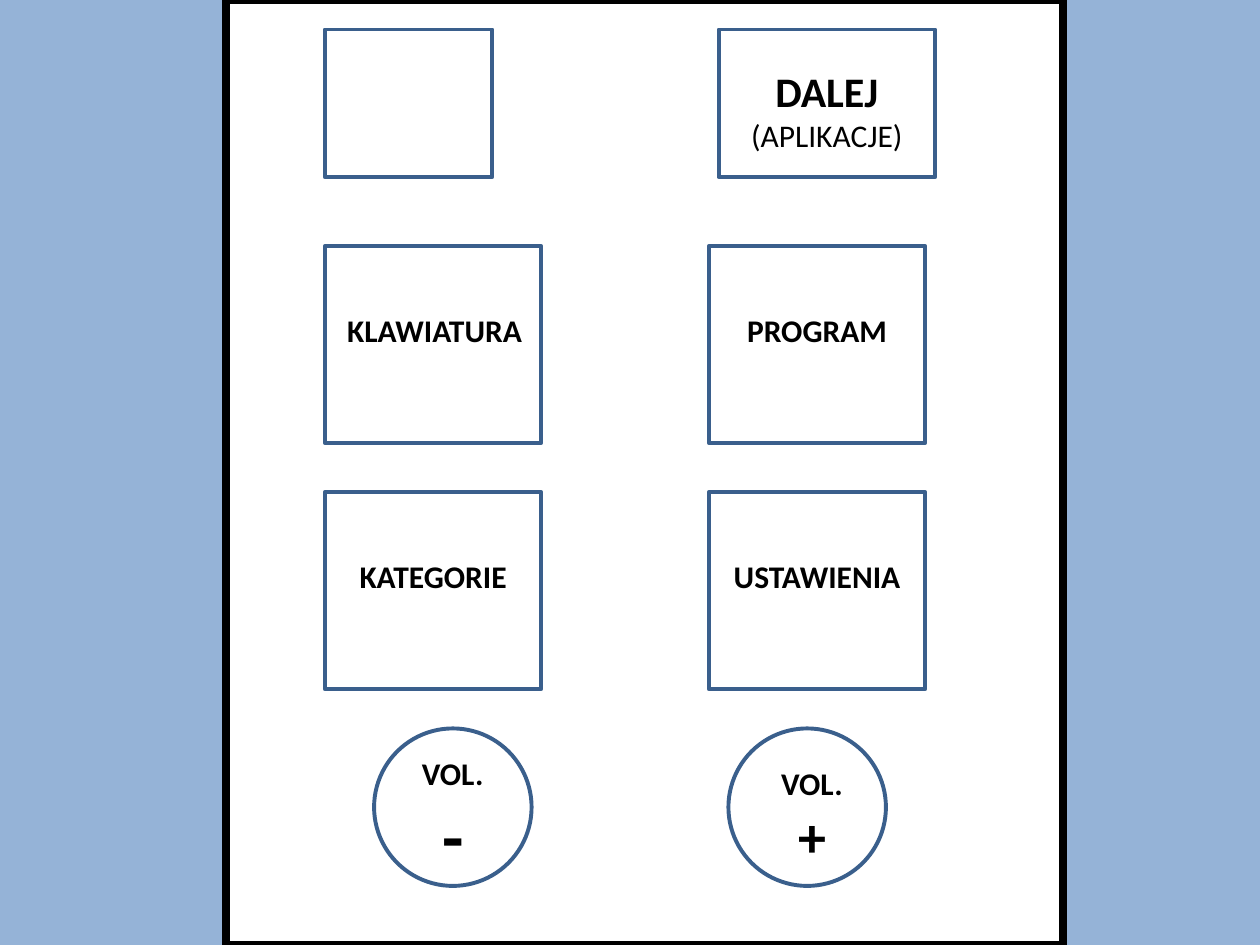
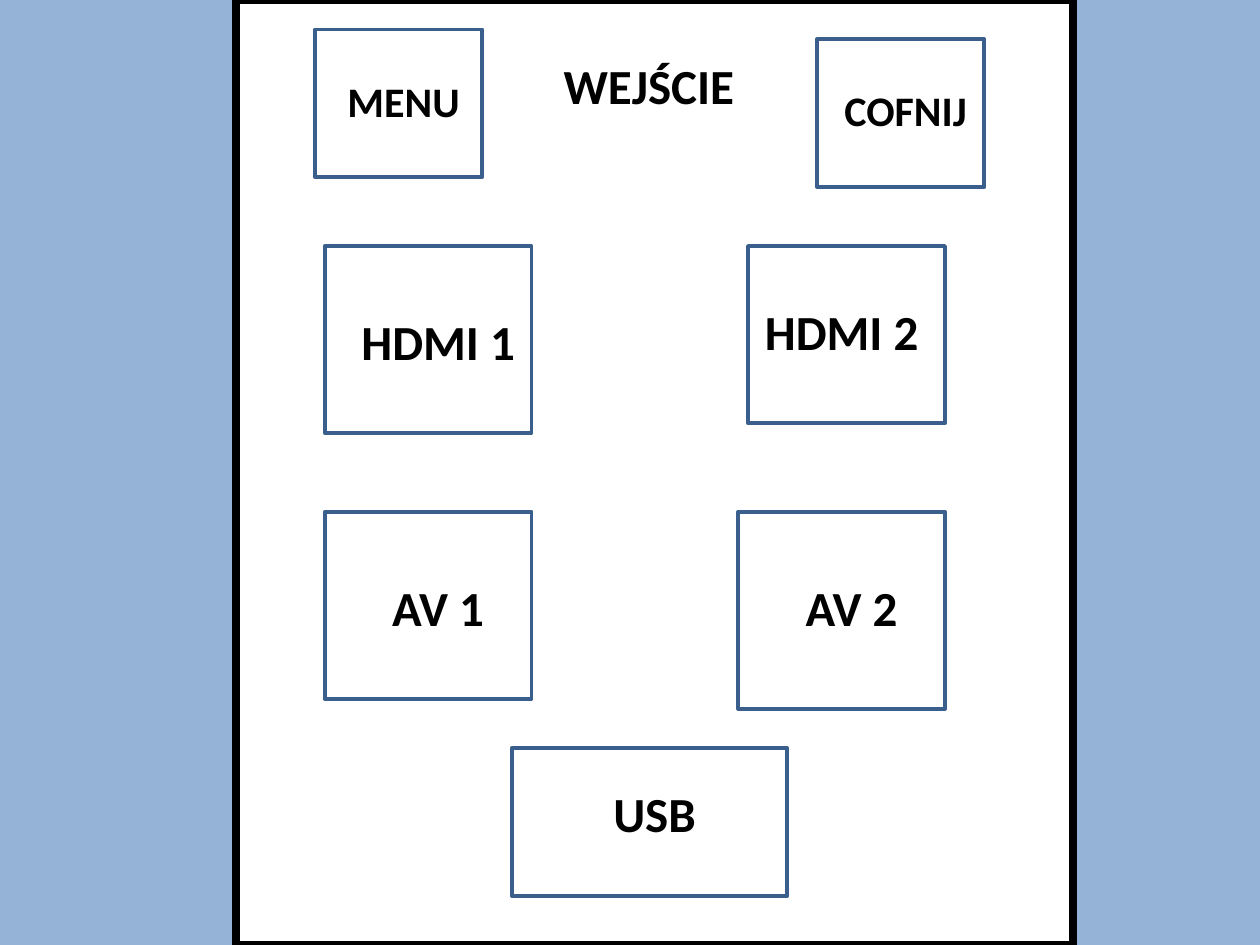
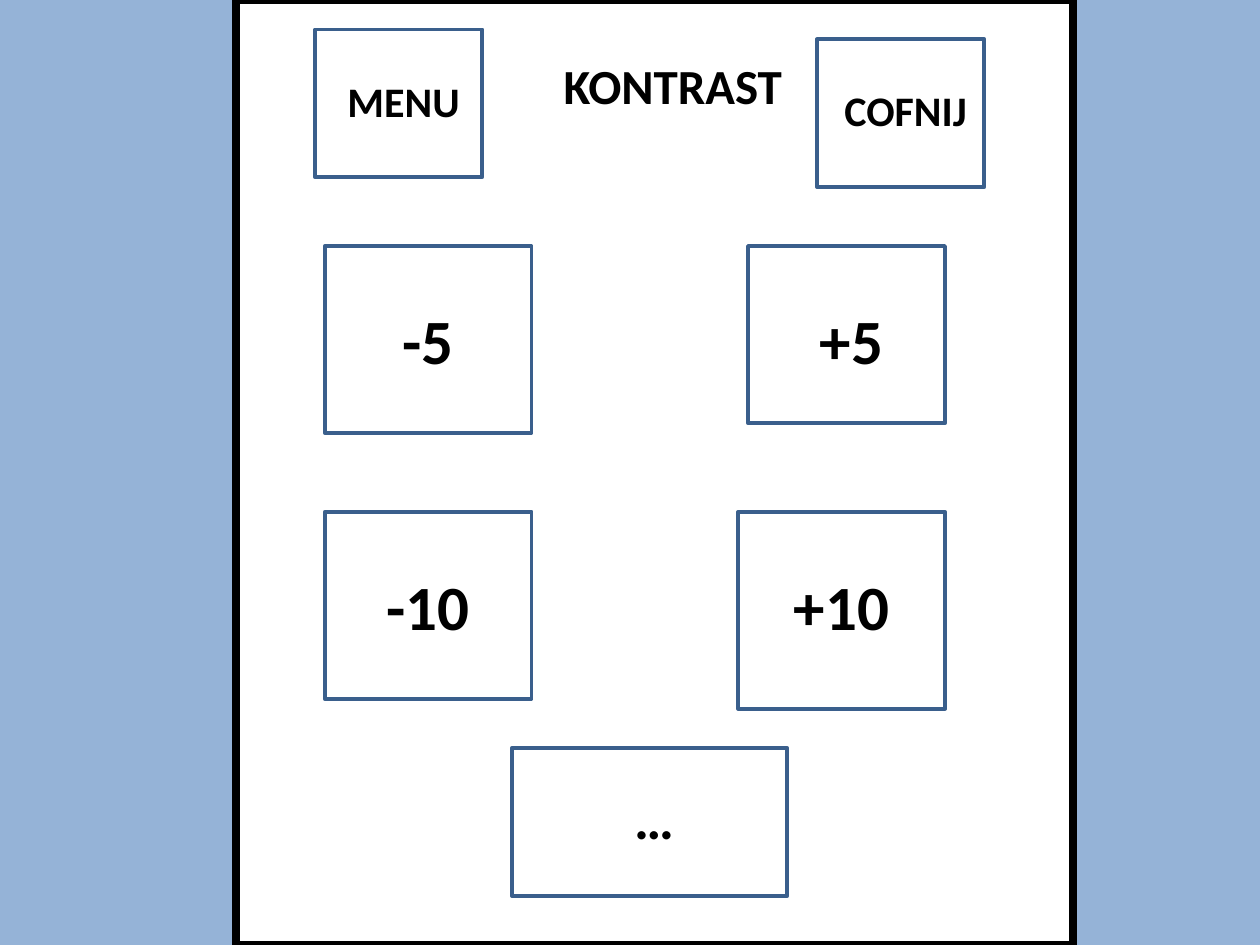
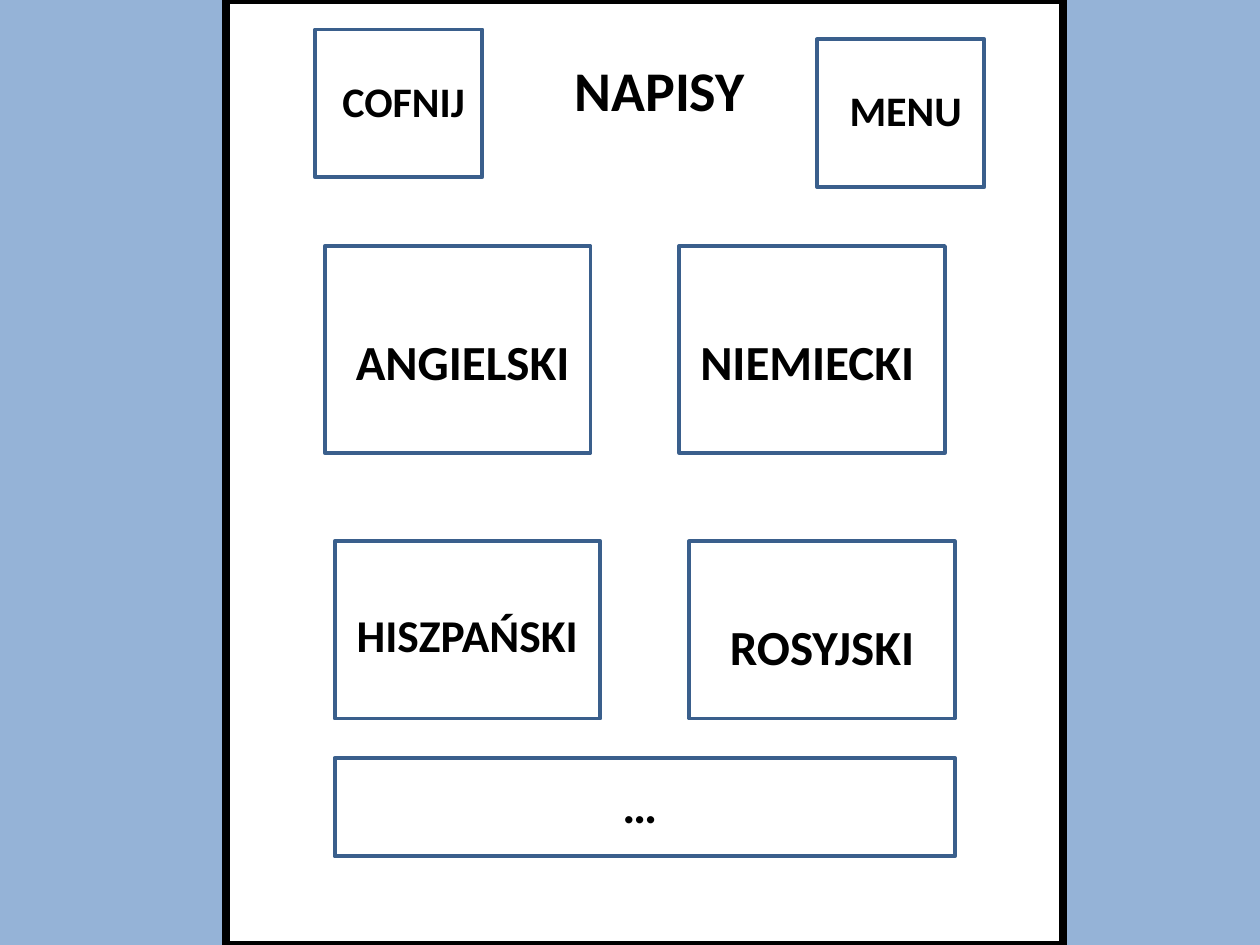
from dataclasses import dataclass
from itertools import product

from pptx import Presentation
from pptx.dml.color import RGBColor
from pptx.enum.shapes import MSO_SHAPE
from pptx.enum.text import MSO_AUTO_SIZE, PP_ALIGN
from pptx.slide import Slide
from pptx.util import Emu, Inches, Pt

PX_PER_INCH = 128
SLIDE_WIDTH, SLIDE_HEIGHT = 1280, 960
PANEL_WIDTH = 850
FONT = "Calibri"
COLORS = {
    "backdrop": "95B3D7",
    "panel": "FFFFFF",
    "frame": "000000",
    "button": "3A5F8C",
    "text": "000000",
}


@dataclass(frozen=True)
class Button:
    left: int
    top: int
    width: int
    height: int
    outline: MSO_SHAPE = MSO_SHAPE.RECTANGLE


@dataclass(frozen=True)
class Line:
    text: str
    size: int
    bold: bool = True


@dataclass(frozen=True)
class Label:
    left: int
    top: int
    width: int
    lines: tuple[Line, ...]
    align: PP_ALIGN = PP_ALIGN.CENTER
    height: int = 0


@dataclass(frozen=True)
class Screen:
    panel_left: int
    buttons: tuple[Button, ...]
    labels: tuple[Label, ...]


def px(length: int) -> Emu:
    return Emu(round(length * Inches(1) / PX_PER_INCH))


def color(name: str) -> RGBColor:
    return RGBColor.from_string(COLORS[name])


def caption(left: int, top: int, width: int, text: str, size: int = 28) -> Label:
    return Label(left, top, width, (Line(text, size),))


def title(text: str) -> Label:
    return Label(560, 50, 290, (Line(text, 28),), PP_ALIGN.LEFT)


def corner_labels(left_text: str, right_text: str) -> tuple[Label, ...]:
    return caption(310, 70, 200, left_text, 24), caption(820, 80, 200, right_text, 24)


def fitted_height(lines: tuple[Line, ...]) -> int:
    return round(2.17 * sum(line.size for line in lines) + 12.3)


def draw_outline(slide: Slide, button: Button, line_color: str, line_width: float, fill: str = "") -> None:
    shape = slide.shapes.add_shape(
        button.outline, px(button.left), px(button.top), px(button.width), px(button.height)
    )
    shape.shadow.inherit = False
    if fill:
        shape.fill.solid()
        shape.fill.fore_color.rgb = color(fill)
    else:
        shape.fill.background()
    shape.line.color.rgb = color(line_color)
    shape.line.width = Pt(line_width)


def draw_label(slide: Slide, label: Label) -> None:
    height = label.height or fitted_height(label.lines)
    frame = slide.shapes.add_textbox(
        px(label.left), px(label.top), px(label.width), px(height)
    ).text_frame
    frame.word_wrap = True
    frame.auto_size = MSO_AUTO_SIZE.SHAPE_TO_FIT_TEXT
    frame.text = "\n".join(line.text for line in label.lines)
    for paragraph, line in zip(frame.paragraphs, label.lines):
        paragraph.alignment = label.align
        font = paragraph.runs[0].font
        font.name = FONT
        font.size = Pt(line.size)
        font.bold = line.bold
        font.color.rgb = color("text")


def draw_screen(presentation: Presentation, screen: Screen) -> None:
    slide = presentation.slides.add_slide(presentation.slide_layouts[6])
    slide.background.fill.solid()
    slide.background.fill.fore_color.rgb = color("backdrop")
    panel = Button(screen.panel_left, 0, PANEL_WIDTH, SLIDE_HEIGHT)
    draw_outline(slide, panel, "frame", 4.5, "panel")
    for button in screen.buttons:
        draw_outline(slide, button, "button", 2.25)
    for label in screen.labels:
        draw_label(slide, label)


CORNER_BUTTONS = (Button(320, 30, 170, 150), Button(830, 40, 170, 150))
KEYPAD_BUTTONS = CORNER_BUTTONS + (
    Button(330, 250, 210, 190),
    Button(760, 250, 200, 180),
    Button(330, 520, 210, 190),
    Button(750, 520, 210, 200),
    Button(520, 760, 280, 150),
)

MAIN_MENU = Screen(
    230,
    (
        Button(330, 30, 170, 150),
        Button(730, 30, 220, 150),
        *(Button(left, top, 220, 200) for top, left in product((250, 500), (330, 720))),
        *(Button(left, 740, 160, 160, MSO_SHAPE.OVAL) for left in (380, 740)),
    ),
    (
        Label(750, 60, 180, (Line("DALEJ", 24), Line("(APLIKACJE)", 18, False))),
        Label(340, 310, 210, (Line("KLAWIATURA", 18),), PP_ALIGN.LEFT),
        caption(730, 310, 200, "PROGRAM", 18),
        caption(340, 560, 200, "KATEGORIE", 18),
        caption(730, 560, 200, "USTAWIENIA", 18),
        Label(410, 760, 100, (Line("VOL.", 18), Line("-", 40))),
        Label(780, 770, 90, (Line("VOL.", 18), Line("+", 32))),
    ),
)

INPUT_MENU = Screen(
    240,
    KEYPAD_BUTTONS,
    (
        title("WEJŚCIE"),
        *corner_labels("MENU", "COFNIJ"),
        caption(320, 310, 250, "HDMI 1"),
        caption(720, 300, 270, "HDMI 2"),
        caption(310, 580, 270, "AV 1"),
        caption(740, 580, 250, "AV 2"),
        caption(530, 790, 270, "USB"),
    ),
)

CONTRAST_MENU = Screen(
    240,
    KEYPAD_BUTTONS,
    (
        title("KONTRAST"),
        *corner_labels("MENU", "COFNIJ"),
        caption(340, 300, 190, "-5", 36),
        caption(770, 300, 190, "+5", 36),
        caption(340, 570, 190, "-10", 36),
        caption(760, 570, 190, "+10", 36),
        Label(530, 790, 270, (Line("…", 32),), height=120),
    ),
)

SUBTITLE_MENU = Screen(
    230,
    CORNER_BUTTONS
    + (
        Button(330, 250, 270, 210),
        Button(690, 250, 270, 210),
        Button(340, 550, 270, 180),
        Button(700, 550, 270, 180),
        Button(340, 770, 630, 100),
    ),
    (
        caption(540, 50, 260, "NAPISY", 32),
        *corner_labels("COFNIJ", "MENU"),
        caption(340, 330, 260, "ANGIELSKI"),
        caption(690, 330, 260, "NIEMIECKI"),
        caption(340, 610, 270, "HISZPAŃSKI", 26),
        caption(710, 620, 250, "ROSYJSKI"),
        caption(520, 780, 260, "…"),
    ),
)


def main() -> None:
    presentation = Presentation()
    presentation.slide_width = px(SLIDE_WIDTH)
    presentation.slide_height = px(SLIDE_HEIGHT)
    for screen in (MAIN_MENU, INPUT_MENU, CONTRAST_MENU, SUBTITLE_MENU):
        draw_screen(presentation, screen)
    presentation.save("out.pptx")


if __name__ == "__main__":
    main()
